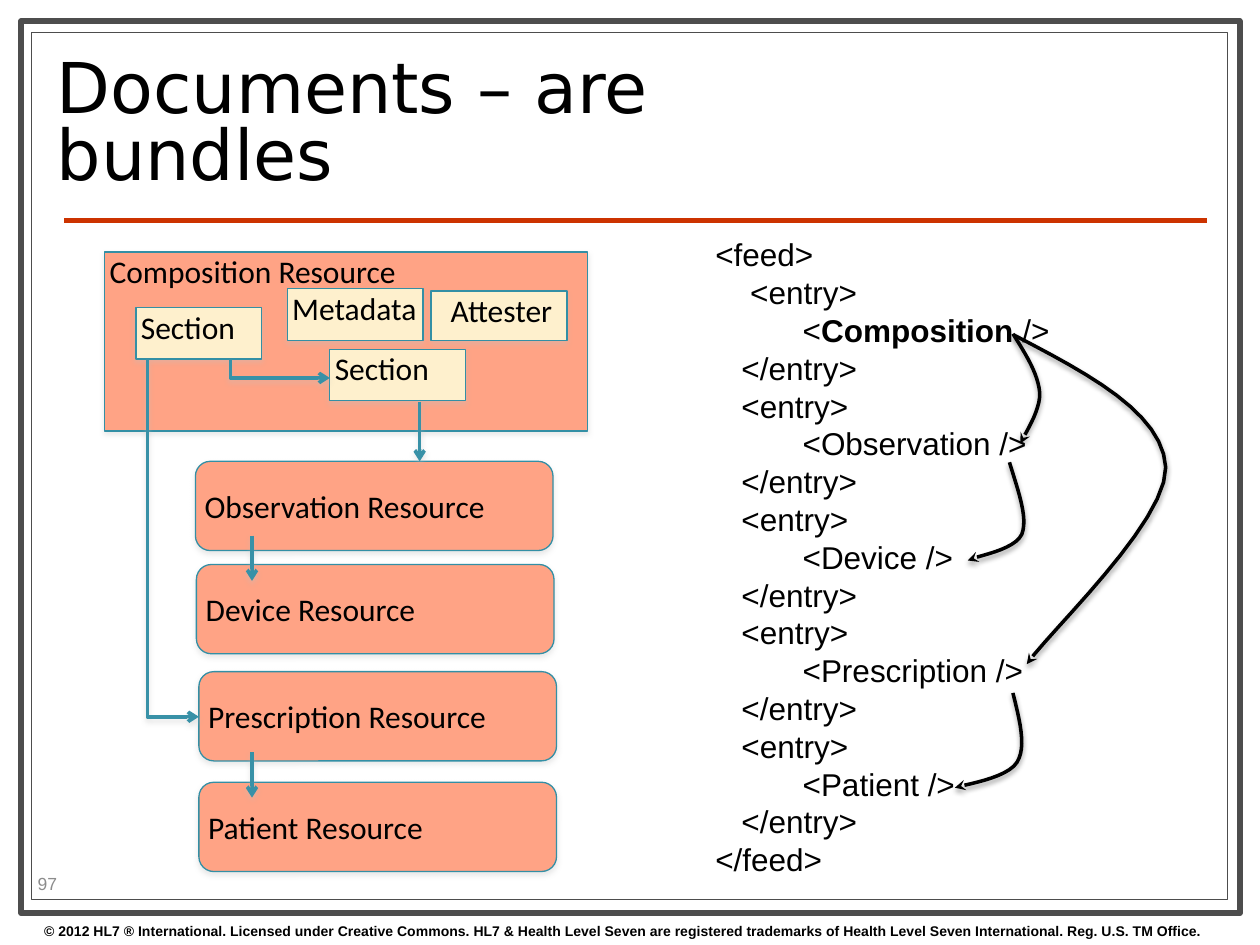
"""Build the slide that shows documents as bundles of resources."""
from lxml.etree import SubElement as Sub
from pptx import Presentation as Deck
from pptx.dml.color import RGBColor as RGB
from pptx.enum.shapes import MSO_CONNECTOR as Link, MSO_SHAPE as Form
from pptx.enum.text import MSO_ANCHOR as Anchor, MSO_AUTO_SIZE as Fit, PP_ALIGN as Align
from pptx.oxml.ns import qn
from pptx.util import Cm, Pt

THEME = {
    "white": "FFFFFF", "ink": "000000", "frame": "4D4D4D", "rule": "CC3300",
    "salmon": "FFA385", "cream": "FEF0CD", "edge": "338FA5", "link": "3891A7",
    "gray": "8C8C8C", "shade": "C0C0C0",
    "head": ("DejaVu Sans", 40), "label": ("Calibri", 18), "code": ("Arial", 18),
    "page": ("Arial", 10), "foot": ("Arial", 8),
}
TITLE = "Documents – are bundles"
FOOT = ("© 2012 HL7 ® International. Licensed under Creative Commons. HL7 & Health Level Seven "
        "are registered trademarks of Health Level Seven International. Reg. U.S. TM Office.")
PAGE = "97"
FRAMES = [((0.43, 0.43, 24.56, 17.98), 3.5), ((0.64, 0.66, 24.1, 17.48), 0.75)]
CARDS = [
    ("Observation Resource", 3.94, 9.3),
    ("Device Resource", 3.96, 11.38),
    ("Prescription Resource", 4.01, 13.54),
    ("Patient Resource", 4.01, 15.77),
]
CARD = (7.21, 1.8)
WHOLE = ("Composition Resource", (2.11, 5.08, 9.73, 3.61))
PARTS = [
    ("Section", (2.74, 6.2, 2.54, 1.04), Align.LEFT),
    ("Section", (6.65, 7.04, 2.74, 1.04), Align.LEFT),
    ("Attester", (8.69, 5.87, 2.74, 0.99), Align.CENTER),
    ("Metadata", (5.79, 5.82, 2.74, 1.04), Align.LEFT),
]
BENDS = [
    [(4.65, 7.24), (4.65, 7.62), (6.65, 7.62)],
    [(2.97, 7.24), (2.97, 14.45), (4.01, 14.45)],
]
DROPS = [(8.46, 8.1, 9.3), (5.08, 10.8, 11.71), (5.08, 15.16, 16.08)]
TAGS = ["Composition", "Observation", "Device", "Prescription", "Patient"]
CURVES = [
    [(20.42, 6.73), (20.68, 7.14), (20.93, 7.54), (20.96, 7.92),
     (20.98, 8.28), (20.65, 8.76), (20.57, 8.94)],
    [(20.45, 6.76), (21.95, 7.54), (23.44, 8.33), (23.5, 9.42),
     (23.52, 10.54), (21.13, 12.75), (20.7, 13.39)],
    [(20.35, 9.32), (20.52, 9.88), (20.73, 10.44), (20.6, 10.77),
     (20.45, 11.1), (19.69, 11.2), (19.51, 11.3)],
    [(20.42, 13.97), (20.55, 14.5), (20.7, 15.06), (20.5, 15.37),
     (20.29, 15.7), (19.41, 15.82), (19.25, 15.88)],
]


def tint(name):
    return RGB.from_string(THEME[name])


def apply(item, **form):
    for key, val in form.items():
        setattr(item, key, val)


def write(para, text, kind, color="ink", bold=False):
    run = para.add_run()
    run.text = text
    face, size = THEME[kind]
    apply(run.font, name=face, size=Pt(size), bold=bold)
    run.font.color.rgb = tint(color)


def stroke(shape, color, width):
    shape.line.color.rgb = tint(color)
    shape.line.width = Pt(width)


def shade(shape, color=None, alpha=35):
    props = shape._element.spPr
    list_ = props.find(qn("a:effectLst"))
    if list_ is None:
        list_ = Sub(props, qn("a:effectLst"))
    if color:
        cast = Sub(list_, qn("a:outerShdw"), blurRad="38100", dist="21600",
                   dir="5400000", rotWithShape="0")
        hue = Sub(cast, qn("a:srgbClr"), val=THEME[color])
        Sub(hue, qn("a:alpha"), val=str(alpha * 1000))


def arrow(shape, color, head):
    stroke(shape, color, 2)
    Sub(shape._element.spPr.find(qn("a:ln")), qn("a:tailEnd"), type=head)
    shade(shape, "ink" if color == "ink" else "shade", 38)


def block(slide, form, place, fill, edge, width):
    shape = slide.shapes.add_shape(form, *map(Cm, place))
    shape.shadow.inherit = False
    shape.fill.solid()
    shape.fill.fore_color.rgb = tint(fill)
    stroke(shape, edge, width)
    return shape


def label(slide, form, place, fill, text, anchor=Anchor.TOP, align=Align.LEFT):
    shape = block(slide, form, place, fill, "edge", 0.75)
    shade(shape, "shade")
    frame = shape.text_frame
    apply(frame, margin_left=Cm(0.1), margin_right=0, margin_top=0, margin_bottom=0,
          vertical_anchor=anchor, word_wrap=True)
    frame.paragraphs[0].alignment = align
    write(frame.paragraphs[0], text, "label")


def note(slide, place, wrap=True, anchor=Anchor.TOP):
    frame = slide.shapes.add_textbox(*map(Cm, place)).text_frame
    apply(frame, word_wrap=wrap, vertical_anchor=anchor)
    return frame


def trace(slide, dots, color, head):
    first, *rest = [(Cm(x), Cm(y)) for x, y in dots]
    pen = slide.shapes.build_freeform(*first)
    pen.add_line_segments(rest, close=False)
    shape = pen.convert_to_shape()
    shape.fill.background()
    shape.shadow.inherit = False
    arrow(shape, color, head)


def smooth(dots, steps=12):
    out = [dots[0]]
    for at in range(0, len(dots) - 1, 3):
        for step in range(1, steps + 1):
            t = step / steps
            part = ((1 - t) ** 3, 3 * t * (1 - t) ** 2, 3 * t * t * (1 - t), t ** 3)
            out.append(tuple(sum(w * dot[axis] for w, dot in zip(part, dots[at:at + 4]))
                             for axis in (0, 1)))
    return out


def feed():
    rows = [("<feed>", "", "")]
    for tag in TAGS:
        main = tag == TAGS[0]
        pad, end = " " * (4 if main else 3), " />"
        lead = " " * 10 + "<"
        rows += [(pad + "<entry>", "", ""),
                 (lead, tag, end) if main else (lead + tag + end, "", ""),
                 ("   </entry>", "", "")]
    return rows + [("</feed>", "", "")]


def frame_up(slide):
    for place, width in FRAMES:
        block(slide, Form.RECTANGLE, place, "white", "frame", width)
    rule = slide.shapes.add_connector(Link.STRAIGHT, Cm(1.3), Cm(4.45), Cm(24.33), Cm(4.45))
    stroke(rule, "rule", 3)
    shade(rule)
    foot = note(slide, (0.64, 18.47, 24.7, 0.58), False)
    write(foot.paragraphs[0], FOOT, "foot", bold=True)
    page = note(slide, (0.51, 17.5, 2.01, 0.61), anchor=Anchor.MIDDLE)
    write(page.paragraphs[0], PAGE, "page", "gray")
    title = slide.shapes.title
    slide.shapes._spTree.append(title._element)
    apply(title, left=Cm(0.89), top=Cm(0.91), width=Cm(18.21), height=Cm(3.28))
    apply(title.text_frame, vertical_anchor=Anchor.MIDDLE, word_wrap=True, auto_size=Fit.NONE)
    para = title.text_frame.paragraphs[0]
    apply(para, alignment=Align.LEFT, line_spacing=0.8)
    write(para, TITLE, "head")


def main():
    deck = Deck()
    apply(deck, slide_width=Cm(25.4), slide_height=Cm(19.05))
    slide = deck.slides.add_slide(deck.slide_layouts[5])
    frame_up(slide)
    for text, left, top in CARDS:
        label(slide, Form.ROUNDED_RECTANGLE, (left, top, *CARD), "salmon", text, Anchor.MIDDLE)
    label(slide, Form.RECTANGLE, WHOLE[1], "salmon", WHOLE[0])
    for text, place, align in PARTS:
        label(slide, Form.RECTANGLE, place, "cream", text, align=align)
    for dots in BENDS:
        trace(slide, dots, "link", "arrow")
    for x, top, end in DROPS:
        drop = slide.shapes.add_connector(Link.STRAIGHT, Cm(x), Cm(top), Cm(x), Cm(end))
        arrow(drop, "link", "arrow")
    code = note(slide, (14.17, 4.62, 7.32, 13.34), False)
    for at, row in enumerate(feed()):
        para = code.add_paragraph() if at else code.paragraphs[0]
        for spot, text in enumerate(row):
            if text:
                write(para, text, "code", bold=spot == 1)
    for dots in CURVES:
        trace(slide, smooth(dots), "ink", "stealth")
    deck.save("out.pptx")


if __name__ == "__main__":
    main()
